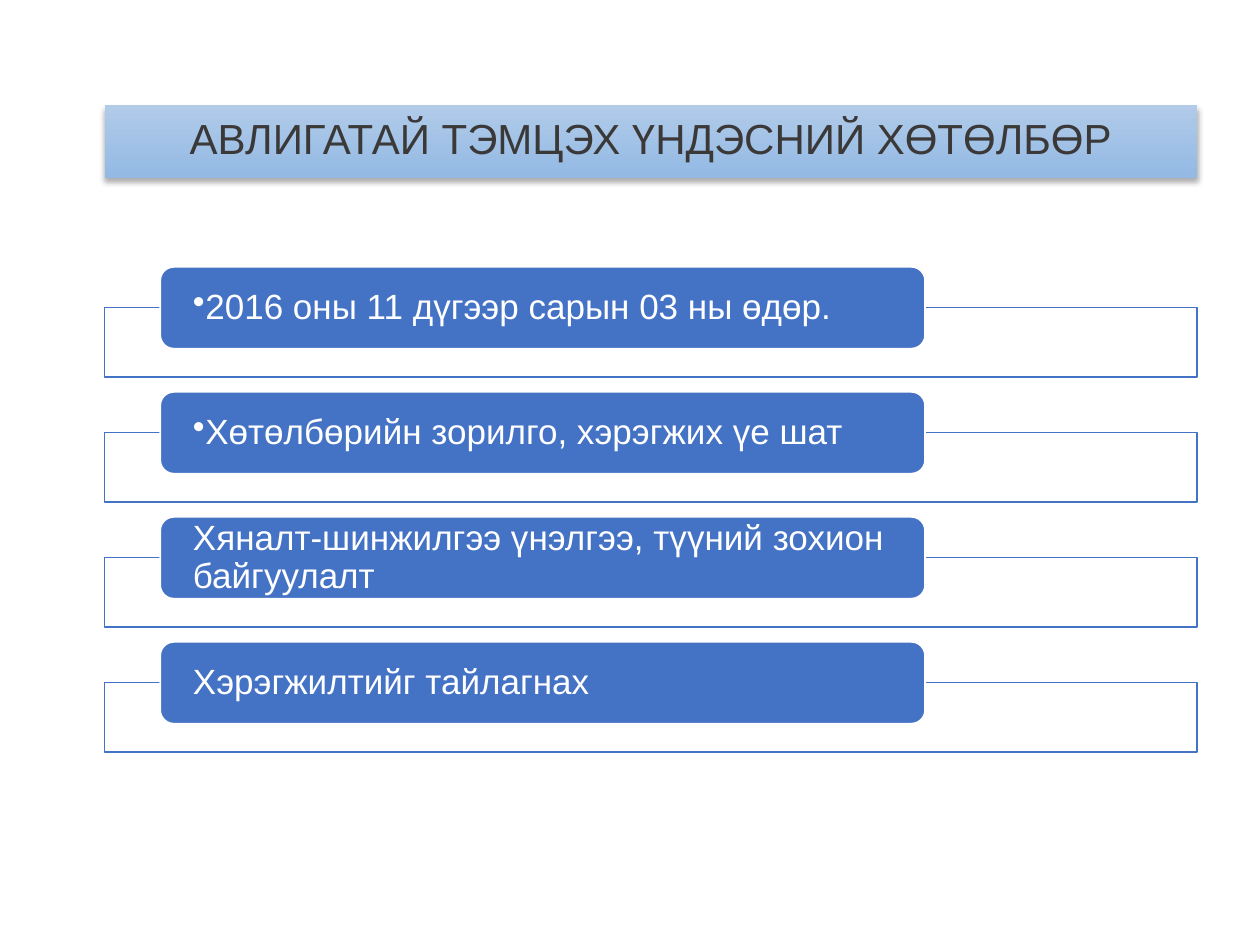
from lxml.etree import SubElement
from pptx import Presentation
from pptx.dml.color import RGBColor
from pptx.enum.shapes import MSO_SHAPE
from pptx.enum.text import MSO_ANCHOR, PP_ALIGN
from pptx.oxml.ns import qn
from pptx.util import Cm, Pt

TITLE = "АВЛИГАТАЙ ТЭМЦЭХ ҮНДЭСНИЙ ХӨТӨЛБӨР"
# (text, has a bullet)
ITEMS = [
    ("2016 оны 11 дүгээр сарын 03 ны өдөр.", True),
    ("Хөтөлбөрийн зорилго, хэрэгжих үе шат", True),
    ("Хяналт-шинжилгээ үнэлгээ, түүний зохион байгуулалт", False),
    ("Хэрэгжилтийг тайлагнах", False),
]

BLUE = RGBColor(0x44, 0x72, 0xC4)
WHITE = RGBColor(0xFF, 0xFF, 0xFF)
DARK = RGBColor(0x3B, 0x38, 0x38)
SKY = [RGBColor(0xB1, 0xCB, 0xE9), RGBColor(0x93, 0xB9, 0xE4)]

LEFT, WIDTH = 2.11, 22.02
TOP, STEP = 5.38, 2.52
PILL_LEFT, PILL_WIDTH, PILL_HEIGHT = 3.23, 15.42, 1.65
DROP, FRAME_HEIGHT = 0.82, 1.4


def add_box(kind, left, top, width, height, fill=None, line=None):
    box = slide.shapes.add_shape(kind, Cm(left), Cm(top), Cm(width), Cm(height))
    box.shadow.inherit = False
    if fill is not None:
        box.fill.solid()
        box.fill.fore_color.rgb = fill
    if line is None:
        box.line.fill.background()
    else:
        box.line.color.rgb = line
        box.line.width = Pt(1)
    return box


def write(box, text, size, color, align, inset):
    frame = box.text_frame
    frame.text = text
    frame.word_wrap = True
    frame.vertical_anchor = MSO_ANCHOR.MIDDLE
    frame.margin_left = frame.margin_right = Cm(inset)
    frame.margin_top = frame.margin_bottom = 0
    para = frame.paragraphs[0]
    para.alignment = align
    para.line_spacing = 0.9
    font = para.runs[0].font
    font.name, font.size, font.color.rgb = "Arial", Pt(size), color
    return para


def add_bullet(para):
    props = para._p.get_or_add_pPr()
    props.set("marL", "0")
    props.set("indent", "0")
    SubElement(props, qn("a:buChar"), char="•")


def add_shadow(box):
    """Cast a soft black shadow straight down."""
    effects = box._element.spPr.find(qn("a:effectLst"))
    shadow = SubElement(effects, qn("a:outerShdw"), blurRad=str(Pt(3.5)),
                        dist=str(Pt(2.2)), dir="5400000", rotWithShape="0")
    color = SubElement(shadow, qn("a:srgbClr"), val="000000")
    SubElement(color, qn("a:alpha"), val="32000")


prs = Presentation()
prs.slide_width, prs.slide_height = Cm(25.4), Cm(19.05)
slide = prs.slides.add_slide(prs.slide_layouts[6])

banner = add_box(MSO_SHAPE.RECTANGLE, LEFT, 2.11, WIDTH, 1.48)
banner.fill.gradient()
banner.fill.gradient_angle = 270
for stop, color in zip(banner.fill.gradient_stops, SKY):
    stop.color.rgb = color
add_shadow(banner)
write(banner, TITLE, 24, DARK, PP_ALIGN.CENTER, 0.25)

for row, (text, bullet) in enumerate(ITEMS):
    top = TOP + row * STEP
    add_box(MSO_SHAPE.RECTANGLE, LEFT, top + DROP, WIDTH, FRAME_HEIGHT, WHITE, BLUE)
    pill = add_box(MSO_SHAPE.ROUNDED_RECTANGLE, PILL_LEFT, top,
                   PILL_WIDTH, PILL_HEIGHT, BLUE, WHITE)
    # A rounded rectangle insets its own text by about 0.08 cm.
    para = write(pill, text, 20, WHITE, PP_ALIGN.LEFT, 0.58)
    if bullet:
        add_bullet(para)

prs.save("out.pptx")
